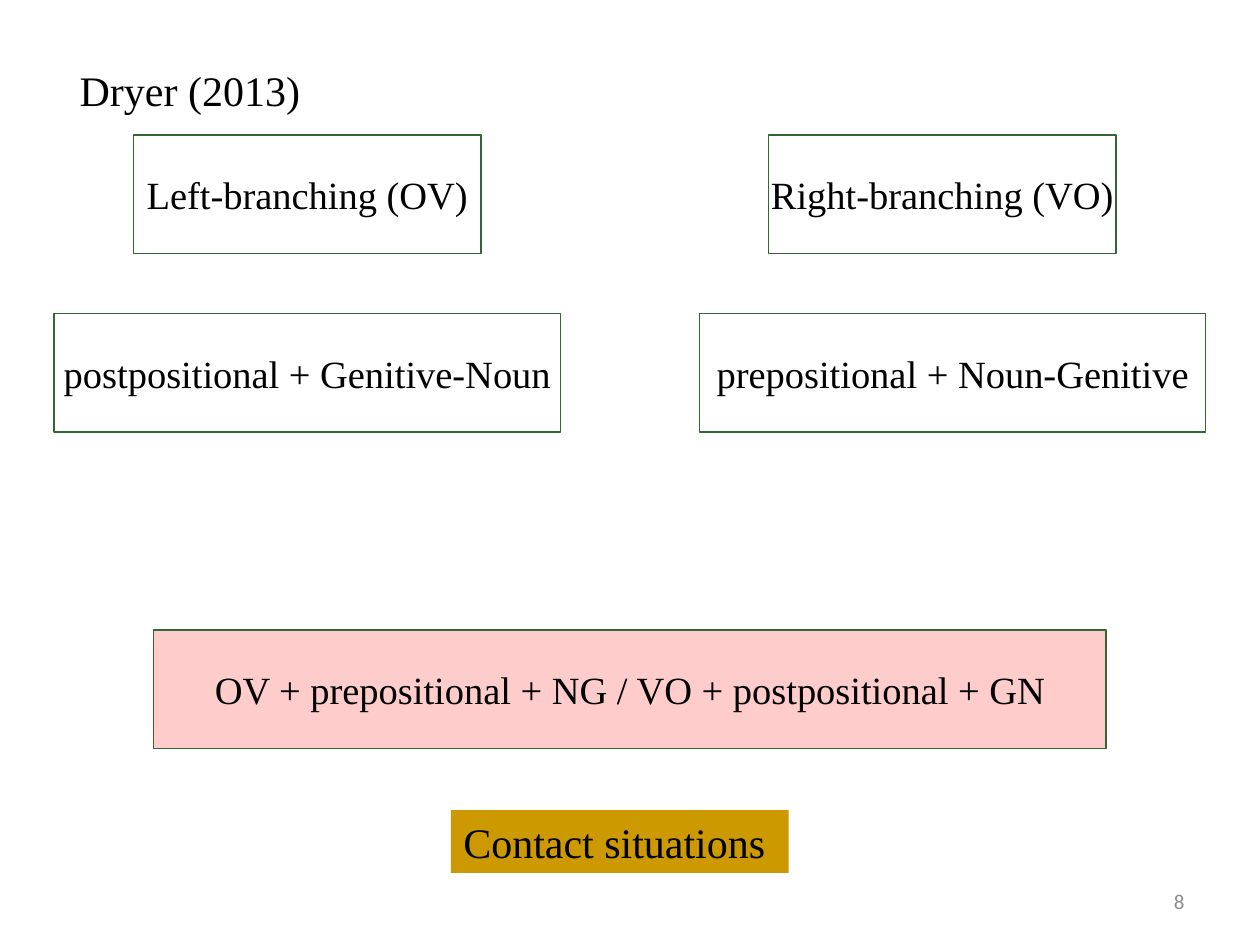
from pptx import Presentation
from pptx.dml.color import RGBColor
from pptx.enum.shapes import MSO_SHAPE
from pptx.enum.text import MSO_ANCHOR, MSO_AUTO_SIZE, PP_ALIGN
from pptx.util import Cm, Pt

SERIF = "Times New Roman"
BOX_HEIGHT = 2.39


def color(hex_value):
    return RGBColor.from_string(hex_value)


def write(shape, text, size, alignment, anchor=MSO_ANCHOR.MIDDLE,
          font_name=SERIF, font_color="000000", wrap=False):
    frame = shape.text_frame
    frame.word_wrap = wrap
    frame.auto_size = MSO_AUTO_SIZE.NONE
    frame.vertical_anchor = anchor
    paragraph = frame.paragraphs[0]
    paragraph.alignment = alignment
    run = paragraph.add_run()
    run.text = text
    run.font.size = Pt(size)
    run.font.name = font_name
    run.font.color.rgb = color(font_color)


def add_rectangle(slide, left, top, width, height, fill, line=None):
    shape = slide.shapes.add_shape(
        MSO_SHAPE.RECTANGLE, Cm(left), Cm(top), Cm(width), Cm(height))
    shape.shadow.inherit = False
    shape.fill.solid()
    shape.fill.fore_color.rgb = color(fill)
    if line:
        shape.line.color.rgb = color(line)
        shape.line.width = Pt(0)
    else:
        shape.line.fill.background()
    return shape


def add_box(slide, left, top, width, text, fill="FFFFFF"):
    shape = add_rectangle(slide, left, top, width, BOX_HEIGHT, fill, "336633")
    write(shape, text, 22, PP_ALIGN.CENTER)


def add_branching_column(slide, left, top, indent, order, properties):
    add_box(slide, left + indent, top, 7.01, order)
    add_box(slide, left, top + 3.6, 10.21, properties)


def add_exceptions(slide, left, top):
    add_box(slide, left, top, 19.2,
            "OV + prepositional + NG / VO + postpositional + GN", "FFCCCC")
    label = add_rectangle(slide, left + 5.99, top + 3.63, 6.81, 1.27, "CC9900")
    write(label, "Contact situations", 24, PP_ALIGN.JUSTIFY,
          MSO_ANCHOR.TOP, wrap=True)


def add_title(slide, left, top, width, height):
    title = slide.shapes.title
    title.left, title.top = Cm(left), Cm(top)
    title.width, title.height = Cm(width), Cm(height)
    write(title, "Dryer (2013)", 24, PP_ALIGN.LEFT, MSO_ANCHOR.TOP)


def add_slide_number(slide, left, top, width, height):
    number = slide.shapes.add_textbox(Cm(left), Cm(top), Cm(width), Cm(height))
    write(number, "8", 12, PP_ALIGN.RIGHT, font_name="Calibri",
          font_color="8C8C8C", wrap=True)


def main():
    presentation = Presentation()
    presentation.slide_width, presentation.slide_height = Cm(25.4), Cm(19.05)
    slide = presentation.slides.add_slide(presentation.slide_layouts[5])
    add_title(slide, 1.35, 1.17, 5, 1.24)
    add_branching_column(slide, 1.09, 2.72, 1.6, "Left-branching (OV)",
                         "postpositional + Genitive-Noun")
    add_branching_column(slide, 14.1, 2.72, 1.39, "Right-branching (VO)",
                         "prepositional + Noun-Genitive")
    add_exceptions(slide, 3.1, 12.7)
    add_slide_number(slide, 18.21, 17.65, 5.92, 1.02)
    presentation.save("out.pptx")


if __name__ == "__main__":
    main()
